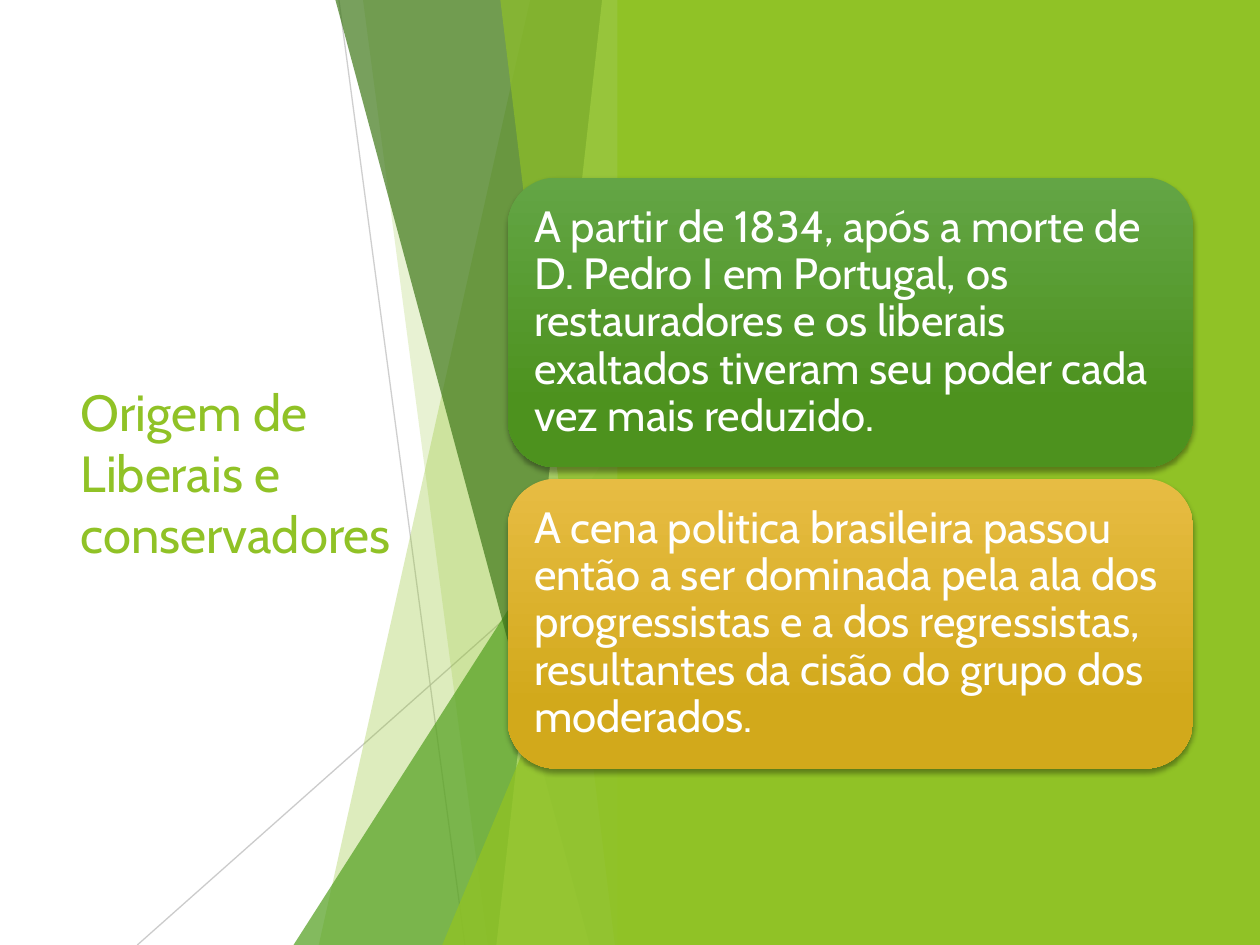
from lxml import etree
from pptx import Presentation
from pptx.dml.color import RGBColor
from pptx.enum.shapes import MSO_CONNECTOR, MSO_SHAPE
from pptx.enum.text import MSO_ANCHOR, MSO_AUTO_SIZE, PP_ALIGN
from pptx.oxml.ns import qn
from pptx.util import Inches, Pt

STRAIGHT = MSO_CONNECTOR.STRAIGHT
TRIANGLE = MSO_SHAPE.ISOSCELES_TRIANGLE
RECTANGLE = MSO_SHAPE.RECTANGLE
ROUNDED = MSO_SHAPE.ROUNDED_RECTANGLE
MIDDLE = MSO_ANCHOR.MIDDLE
LEFT = PP_ALIGN.LEFT
NO_FIT = MSO_AUTO_SIZE.NONE

COLORS = {
    "white": "FFFFFF", "black": "000000", "gray": "BFBFBF", "lime": "90C226",
    "green": "54A021", "forest": "3F7819", "pale": "C0E474",
    "green_top": "63A545", "green_base": "4D921E",
    "gold_top": "E7BC43", "gold_base": "D2A91B",
}
FONT = "Cabin"
WIDTH, HEIGHT = 10, 7.5
FACET_TOP, FACET_RIGHT = -0.01, 5

TITLE = "Origem de Liberais e conservadores"
CARDS = [
    ("A partir de 1834, após a morte de D. Pedro I em Portugal, os restauradores "
     "e os liberais exaltados tiveram seu poder cada vez mais reduzido.",
     "green_top", "green_base"),
    ("A cena politica brasileira passou então a ser dominada pela ala dos "
     "progressistas e a dos regressistas, resultantes da cisão do grupo dos moderados.",
     "gold_top", "gold_base"),
]
RAYS = [((2.69, 0), (3.69, HEIGHT), 75), ((FACET_RIGHT, 4.03), (1.09, HEIGHT), 80)]
FACETS = [
    ("band", 4.21, 2.53, "lime", 30),
    ("band", 2.88, 3.87, "lime", 20),
    ("peak", 2.33, 3.33, "green", 72),
    ("band", 2.66, 4.68, "forest", 70),
    ("band", 4.78, 3.94, "pale", 70),
    ("band", 3.97, 4.88, "lime", 65),
    ("peak", 3.51, 3.93, "lime", 80),
]
PANEL_LEFT = 4.9
CARD_LEFT, CARD_TOP, CARD_WIDTH, CARD_HEIGHT, CARD_STEP = 4.03, 1.41, 5.44, 2.3, 2.39
TEXT_INSET = 0.11
FRAME_FORMAT = {
    "word_wrap": True, "auto_size": NO_FIT, "vertical_anchor": MIDDLE,
}


def rgb(name):
    return RGBColor.from_string(COLORS[name])


def inches(*values):
    return [Inches(value) for value in values]


def set_alpha(part, percent):
    for color in part._element.spPr.iter(qn("a:srgbClr")):
        etree.SubElement(color, qn("a:alpha"), val=str(percent * 1000))


def paint(part, color):
    part.shadow.inherit = False
    part.fill.solid()
    part.fill.fore_color.rgb = rgb(color)
    part.line.fill.background()


def write(frame, wording, size, color, spacing, margins):
    frame.text = wording
    sides = ("margin_left", "margin_top", "margin_right", "margin_bottom")
    for name, value in {**FRAME_FORMAT, **dict(zip(sides, inches(*margins)))}.items():
        setattr(frame, name, value)
    paragraph = frame.paragraphs[0]
    paragraph.alignment = LEFT
    paragraph.line_spacing = spacing
    for name, value in {"name": FONT, "size": Pt(size)}.items():
        setattr(paragraph.font, name, value)
    paragraph.font.color.rgb = rgb(color)


def add_ray(shapes, start, end, opacity):
    ray = shapes.add_connector(STRAIGHT, *inches(*start, *end))
    ray.line.color.rgb = rgb("gray")
    ray.line.width = Pt(0.75)
    set_alpha(ray, opacity)
    etree.SubElement(ray._element.spPr, qn("a:effectLst"))


def add_facet(shapes, kind, first, second, color, opacity):
    if kind == "band":
        corners = [(FACET_RIGHT, FACET_TOP), (FACET_RIGHT, HEIGHT), (second, HEIGHT)]
        outline = shapes.build_freeform(*inches(first, FACET_TOP))
        outline.add_line_segments([inches(*corner) for corner in corners])
        facet = outline.convert_to_shape()
    else:
        facet = shapes.add_shape(
            TRIANGLE, *inches(first, second, FACET_RIGHT - first, HEIGHT - second))
        facet.adjustments[0] = 1
    paint(facet, color)
    set_alpha(facet, opacity)


def add_card(shapes, top, wording, top_color, base_color):
    card = shapes.add_shape(ROUNDED, *inches(CARD_LEFT, top, CARD_WIDTH, CARD_HEIGHT))
    card.shadow.inherit = False
    card.line.fill.background()
    card.fill.gradient()
    card.fill.gradient_angle = 270
    stops = zip(card.fill.gradient_stops, (0, 0.78), (top_color, base_color))
    for stop, position, color in stops:
        stop.position = position
        stop.color.rgb = rgb(color)
    effects = card._element.spPr.find(qn("a:effectLst"))
    shadow = etree.SubElement(
        effects, qn("a:outerShdw"), blurRad=str(Pt(3)), dist=str(Pt(2)),
        dir="5400000", rotWithShape="0")
    shade = etree.SubElement(shadow, qn("a:srgbClr"), val=COLORS["black"])
    etree.SubElement(shade, qn("a:alpha"), val="35000")
    caption = shapes.add_textbox(*inches(
        CARD_LEFT + TEXT_INSET, top + TEXT_INSET,
        CARD_WIDTH - 2 * TEXT_INSET, CARD_HEIGHT - 2 * TEXT_INSET))
    write(caption.text_frame, wording, 25, "white", 0.9, (0.1, 0.1, 0.1, 0.1))


def main():
    deck = Presentation()
    deck.slide_width, deck.slide_height = inches(WIDTH, HEIGHT)
    slide = deck.slides.add_slide(deck.slide_layouts[5])
    slide.background.fill.solid()
    slide.background.fill.fore_color.rgb = rgb("white")
    shapes = slide.shapes

    title = shapes.title
    place = zip(("left", "top", "width", "height"), inches(0.54, 1.51, 2.91, 4.48))
    for name, value in place:
        setattr(title, name, value)
    write(title.text_frame, TITLE, 29, "lime", 1.0, (0.1, 0.05, 0.1, 0.05))

    for ray in RAYS:
        add_ray(shapes, *ray)
    for facet in FACETS:
        add_facet(shapes, *facet)
    panel = shapes.add_shape(
        RECTANGLE, *inches(PANEL_LEFT, 0, WIDTH - PANEL_LEFT, HEIGHT))
    paint(panel, "lime")
    for index, card in enumerate(CARDS):
        add_card(shapes, CARD_TOP + index * CARD_STEP, *card)

    deck.save("out.pptx")


if __name__ == "__main__":
    main()
